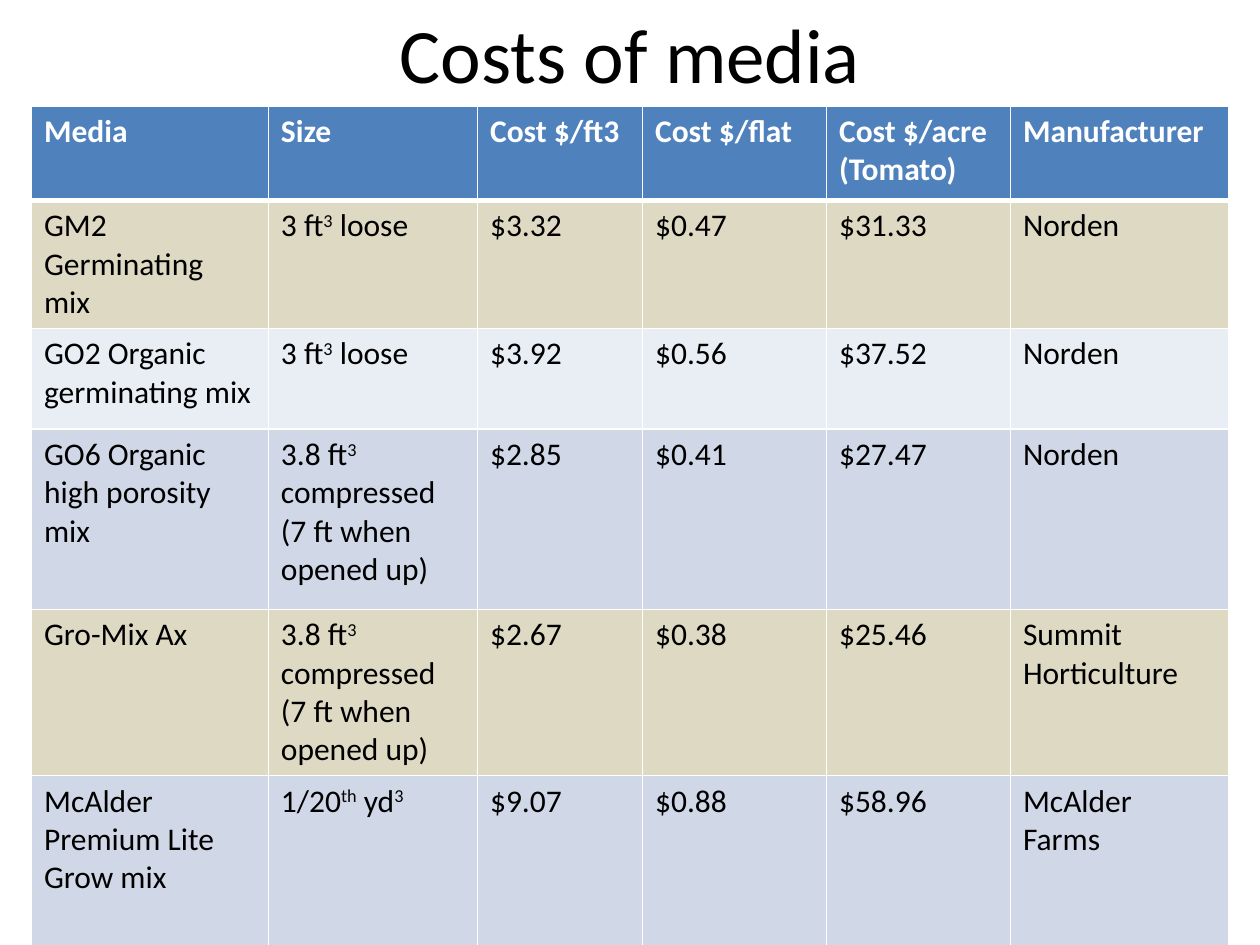
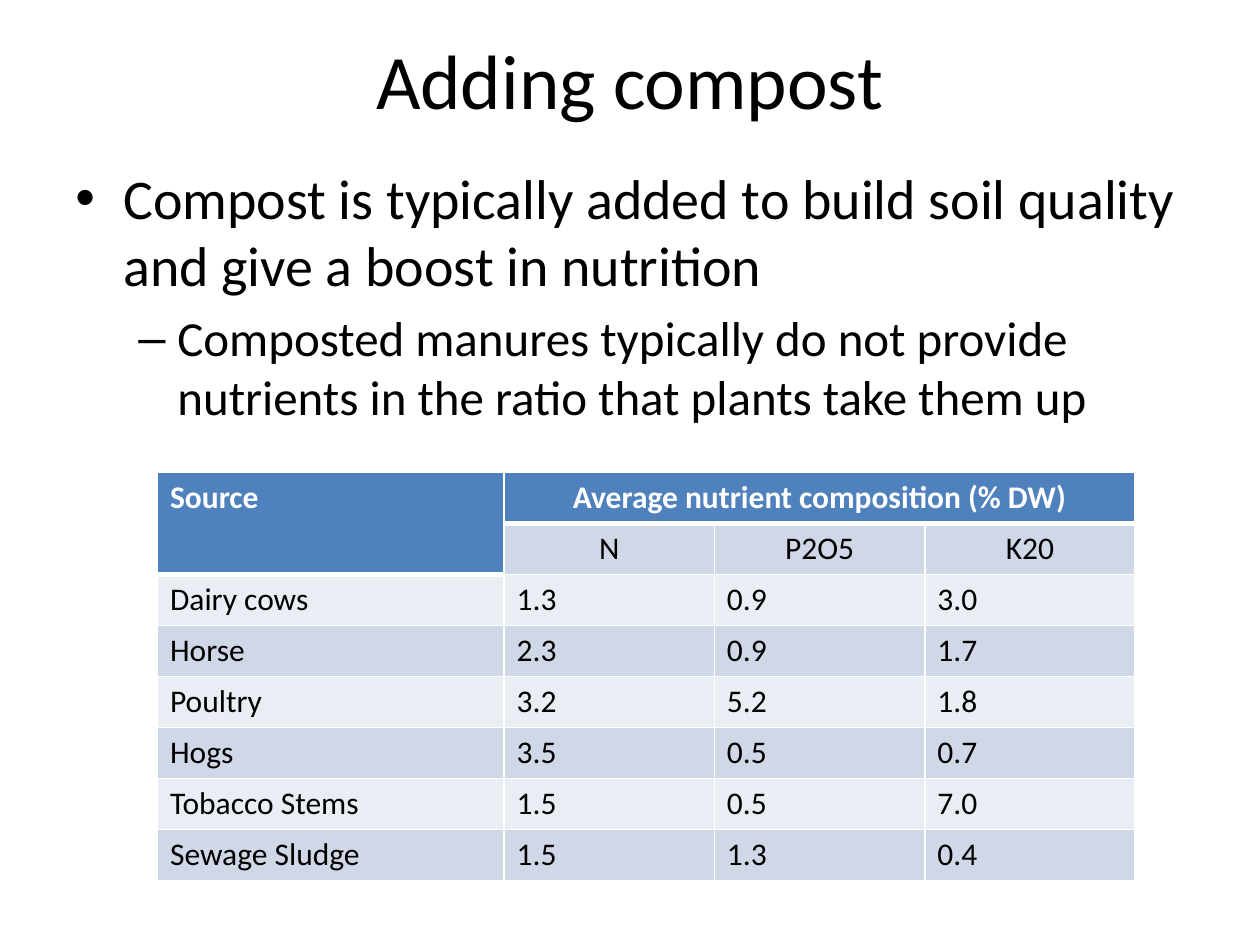
from dataclasses import dataclass

from lxml import etree
from pptx import Presentation
from pptx.dml.color import RGBColor
from pptx.enum.text import MSO_ANCHOR, PP_ALIGN
from pptx.oxml.ns import qn
from pptx.util import Inches, Pt

LEFT, CENTER = PP_ALIGN.LEFT, PP_ALIGN.CENTER
MIDDLE = MSO_ANCHOR.MIDDLE

# Shared look
FONT = "Calibri"
BLACK, WHITE = "000000", "FFFFFF"
HEADER_BLUE, BAND_BLUE, PALE_BLUE, SAND = "4F81BD", "D0D8E8", "E9EDF4", "DDD9C3"
TITLE_SIZE, CELL_SIZE = 44, 18
THIN, THICK = 1, 3
TITLE_ONLY = 5


@dataclass(frozen=True)
class TableSpec:
    left: float
    top: float
    column_widths: list[float]
    row_heights: list[float]
    rows: list[list[str]]
    row_fills: list[str]
    header_depths: list[int]  # header cells at the top of each column
    centered_rows: int = 0  # top rows centred right of the first column


@dataclass(frozen=True)
class Bullet:
    text: str
    mark: str
    size: float
    margin: float
    hanging: float


# Text between carets is superscript
MEDIA_COSTS = TableSpec(
    left=0.25, top=0.84,
    column_widths=[1.88, 1.66, 1.31, 1.46, 1.46, 1.73],
    row_heights=[0.75, 0.96, 0.8, 1.43, 1.3, 1.37],
    rows=[
        ["Media", "Size", "Cost $/ft3", "Cost $/flat", "Cost $/acre\n(Tomato)", "Manufacturer"],
        ["GM2 Germinating mix", "3 ft^3^ loose", "$3.32", "$0.47", "$31.33", "Norden"],
        ["GO2 Organic germinating mix", "3 ft^3^ loose", "$3.92", "$0.56", "$37.52", "Norden"],
        ["GO6 Organic high porosity mix", "3.8 ft^3^ compressed\n(7 ft when opened up)",
         "$2.85", "$0.41", "$27.47", "Norden"],
        ["Gro-Mix Ax", "3.8 ft^3^ compressed\n(7 ft when opened up)",
         "$2.67", "$0.38", "$25.46", "Summit Horticulture"],
        ["McAlder Premium Lite Grow mix", "1/20^th^ yd^3^", "$9.07", "$0.88", "$58.96",
         "McAlder Farms"],
    ],
    row_fills=[HEADER_BLUE, SAND, PALE_BLUE, BAND_BLUE, SAND, BAND_BLUE],
    header_depths=[1] * 6,
)

NUTRIENTS = TableSpec(
    left=1.25, top=3.75,
    column_widths=[2.75, 1.67, 1.67, 1.67],
    row_heights=[0.405] * 8,
    rows=[
        ["Source", "Average nutrient composition (% DW)", "", ""],
        ["", "N", "P2O5", "K20"],
        ["Dairy cows", "1.3", "0.9", "3.0"],
        ["Horse", "2.3", "0.9", "1.7"],
        ["Poultry", "3.2", "5.2", "1.8"],
        ["Hogs", "3.5", "0.5", "0.7"],
        ["Tobacco Stems", "1.5", "0.5", "7.0"],
        ["Sewage Sludge", "1.5", "1.3", "0.4"],
    ],
    row_fills=[HEADER_BLUE, BAND_BLUE] + [PALE_BLUE, BAND_BLUE] * 3,
    header_depths=[2, 1, 1, 1],
    centered_rows=2,
)

COMPOST_POINTS = [
    Bullet("Compost is typically added to build soil quality and give a boost in nutrition",
           "•", 32, 0.38, 0.38),
    Bullet("Composted manures typically do not provide nutrients in the ratio that plants "
           "take them up", "–", 28, 0.81, 0.31),
]


def rgb(color: str) -> RGBColor:
    return RGBColor.from_string(color)


def write_text(frame, text: str, *, size: float, color: str = BLACK, bold: bool = False,
               align=LEFT) -> None:
    """Fill a text frame: one paragraph a line, superscript between carets."""
    for number, line in enumerate(text.split("\n")):
        paragraph = frame.add_paragraph() if number else frame.paragraphs[0]
        paragraph.alignment = align
        for position, part in enumerate(line.split("^")):
            if not part:
                continue
            run = paragraph.add_run()
            run.text = part
            run.font.name = FONT
            run.font.size = Pt(size)
            run.font.bold = bold
            run.font.color.rgb = rgb(color)
            if position % 2:
                run.font._element.set("baseline", "30000")


def add_titled_slide(presentation, title: str, height: float):
    slide = presentation.slides.add_slide(presentation.slide_layouts[TITLE_ONLY])
    shape = slide.shapes.title
    shape.left, shape.top = Inches(0.5), Inches(0)
    shape.width, shape.height = Inches(9), Inches(height)
    shape.text_frame.vertical_anchor = MIDDLE
    write_text(shape.text_frame, title, size=TITLE_SIZE, align=CENTER)
    return slide


def add_bullets(slide, bullets: list[Bullet]) -> None:
    box = slide.shapes.add_textbox(Inches(0.5), Inches(1.25), Inches(9), Inches(2.4))
    frame = box.text_frame
    frame.word_wrap = True
    write_text(frame, bullets[0].text, size=bullets[0].size)
    write_text_lines = bullets[1:]
    for bullet in write_text_lines:
        paragraph = frame.add_paragraph()
        paragraph.level = 1
        run = paragraph.add_run()
        run.text = bullet.text
        run.font.name = FONT
        run.font.size = Pt(bullet.size)
        run.font.color.rgb = rgb(BLACK)
    for paragraph, bullet in zip(frame.paragraphs, bullets):
        paragraph.space_before = Pt(bullet.size * 0.2)
        properties = paragraph._p.get_or_add_pPr()
        properties.set("marL", str(Inches(bullet.margin)))
        properties.set("indent", str(-Inches(bullet.hanging)))
        etree.SubElement(properties, qn("a:buFont")).set("typeface", "Arial")
        etree.SubElement(properties, qn("a:buChar")).set("char", bullet.mark)


def set_borders(cell, top: float, bottom: float) -> None:
    properties = cell._tc.get_or_add_tcPr()
    for side, width in (("L", THIN), ("R", THIN), ("T", top), ("B", bottom)):
        line = etree.SubElement(properties, qn(f"a:ln{side}"), w=str(Pt(width)))
        fill = etree.SubElement(line, qn("a:solidFill"))
        etree.SubElement(fill, qn("a:srgbClr"), val=WHITE)


def add_table(slide, spec: TableSpec):
    frame = slide.shapes.add_table(
        len(spec.rows), len(spec.column_widths), Inches(spec.left), Inches(spec.top),
        Inches(sum(spec.column_widths)), Inches(sum(spec.row_heights)))
    table = frame.table
    table.first_row = table.horz_banding = False
    for column, width in zip(table.columns, spec.column_widths):
        column.width = Inches(width)
    for row, height in zip(table.rows, spec.row_heights):
        row.height = Inches(height)
    for row_index, texts in enumerate(spec.rows):
        for column_index, text in enumerate(texts):
            cell = table.cell(row_index, column_index)
            depth = spec.header_depths[column_index]
            is_header = row_index < depth
            # The rule under the header is thick on both sides of the edge
            set_borders(cell, top=THICK if row_index == depth else THIN,
                        bottom=THICK if is_header else THIN)
            cell.fill.solid()
            cell.fill.fore_color.rgb = rgb(
                HEADER_BLUE if is_header else spec.row_fills[row_index])
            centered = row_index < spec.centered_rows and column_index > 0
            write_text(cell.text_frame, text, size=CELL_SIZE, bold=is_header,
                       color=WHITE if is_header else BLACK,
                       align=CENTER if centered else LEFT)
    return table


def main() -> None:
    presentation = Presentation()
    presentation.slide_width, presentation.slide_height = Inches(10), Inches(7.5)

    # Costs of media
    slide = add_titled_slide(presentation, "Costs of media", 0.83)
    add_table(slide, MEDIA_COSTS)

    # Adding compost
    slide = add_titled_slide(presentation, "Adding compost", 1.25)
    add_bullets(slide, COMPOST_POINTS)
    table = add_table(slide, NUTRIENTS)
    table.cell(0, 0).merge(table.cell(1, 0))
    table.cell(0, 1).merge(table.cell(0, 3))

    presentation.save("out.pptx")


if __name__ == "__main__":
    main()
